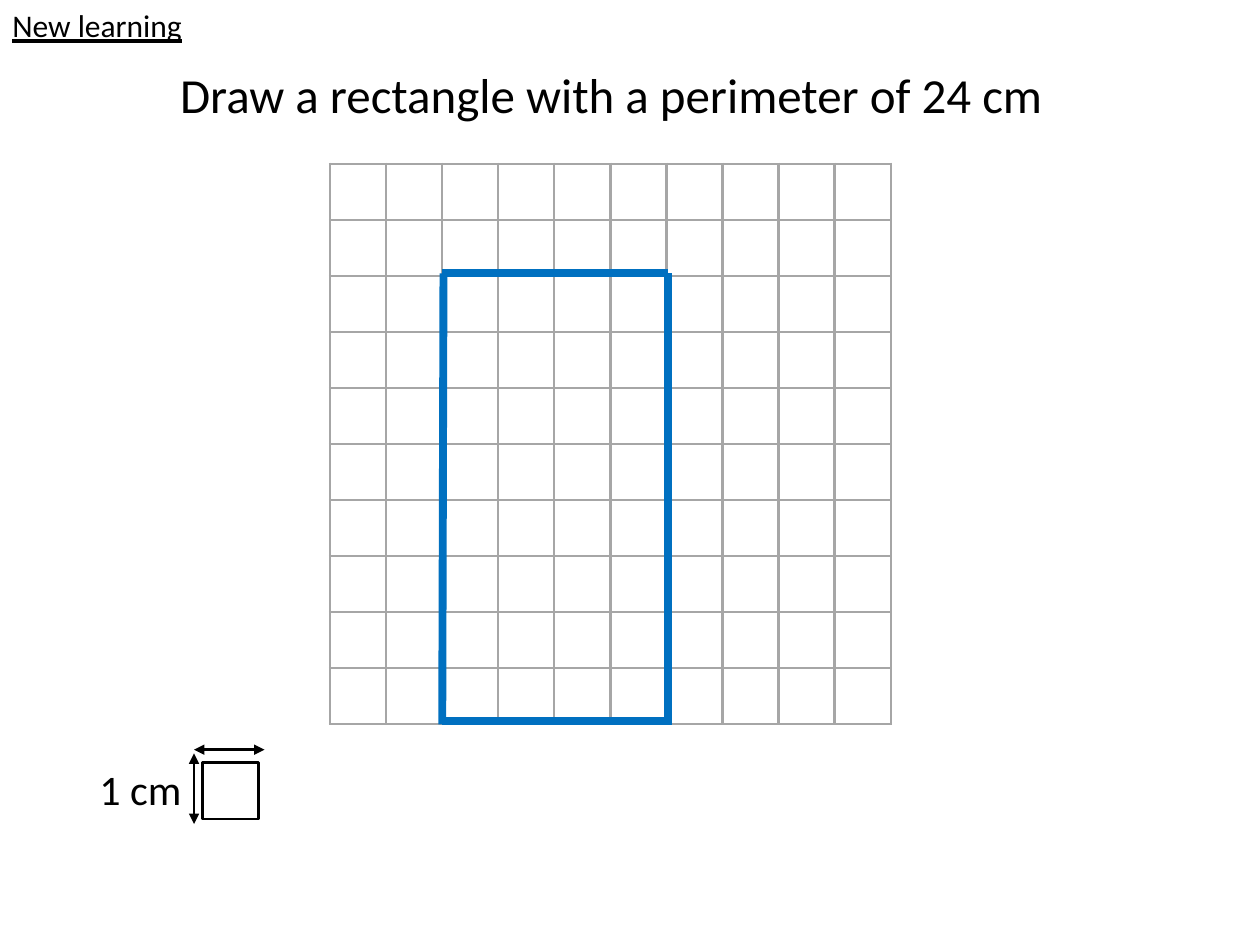
from lxml import etree
from pptx import Presentation
from pptx.dml.color import RGBColor
from pptx.enum import shapes, text
from pptx.oxml import ns
from pptx.util import Inches, Pt

BLACK = RGBColor(0x00, 0x00, 0x00)
WHITE = RGBColor(0xFF, 0xFF, 0xFF)
GREY = RGBColor(0xA6, 0xA6, 0xA6)
BLUE = RGBColor(0x00, 0x70, 0xC0)
FONT = "Calibri"
GRID_COUNT = 10


def add_run(paragraph, wording, size, underline=None):
    run = paragraph.add_run()
    run.text = wording
    run.font.name = FONT
    run.font.size = Pt(size)
    run.font.color.rgb = BLACK
    run.font.underline = underline


def add_label(slide, box, wording, size, wrap=True, underline=None):
    label = slide.shapes.add_textbox(*map(Inches, box))
    frame = label.text_frame
    frame.word_wrap = wrap
    frame.auto_size = text.MSO_AUTO_SIZE.SHAPE_TO_FIT_TEXT
    add_run(frame.paragraphs[0], wording, size, underline)


def add_line(slide, start, end, color, width, arrows=False):
    line = slide.shapes.add_connector(
        shapes.MSO_CONNECTOR.STRAIGHT, *map(Inches, (*start, *end)))
    line.line.color.rgb = color
    line.line.width = Pt(width)
    if arrows:
        outline = line.line._get_or_add_ln()
        for tag in ("a:headEnd", "a:tailEnd"):
            etree.SubElement(outline, ns.qn(tag), type="triangle")
    etree.SubElement(line._element.spPr, ns.qn("a:effectLst"))


def add_title(slide, box):
    title = slide.shapes.title
    title.left, title.top, title.width, title.height = map(Inches, box)
    frame = title.text_frame
    frame.word_wrap = True
    frame.auto_size = text.MSO_AUTO_SIZE.SHAPE_TO_FIT_TEXT
    frame.vertical_anchor = text.MSO_ANCHOR.TOP
    paragraph = frame.paragraphs[0]
    paragraph.alignment = text.PP_ALIGN.CENTER
    paragraph.line_spacing = 1.0
    add_run(paragraph, "Draw a rectangle with a perimeter of 24 cm", 28)


def set_borders(cell, color, width):
    properties = cell._tc.get_or_add_tcPr()
    for position, tag in enumerate(("a:lnL", "a:lnR", "a:lnT", "a:lnB")):
        border = etree.Element(ns.qn(tag), w=str(Pt(width)))
        fill = etree.SubElement(border, ns.qn("a:solidFill"))
        etree.SubElement(fill, ns.qn("a:srgbClr"), val=str(color))
        properties.insert(position, border)


def add_grid(slide, box):
    frame = slide.shapes.add_table(GRID_COUNT, GRID_COUNT, *map(Inches, box))
    table = frame.table
    table.first_row = False
    table.horz_banding = False
    for column in table.columns:
        column.width = Inches(box[2] / GRID_COUNT)
    for row in table.rows:
        row.height = Inches(box[3] / GRID_COUNT)
    for cell in table.iter_cells():
        cell.fill.background()
        set_borders(cell, GREY, 1.5)


def add_rectangle_sides(slide, box):
    """Draw the 4 by 8 rectangle standing on the bottom of the grid."""
    left, top, width, height = box
    right, bottom = left + width, top + height
    base = bottom - 0.03  # the base line sits just inside the grid
    sides = [((left, top), (right, top)),
             ((right, top), (right, bottom)),
             ((left, base), (right, base)),
             ((left + 0.01, top), (left, bottom))]
    for start, end in sides:
        add_line(slide, start, end, BLUE, 4.5)


def add_scale_key(slide, box):
    left, top, width, height = box
    # Unit square
    square = slide.shapes.add_shape(
        shapes.MSO_SHAPE.RECTANGLE, Inches(left + 0.92), Inches(top + 0.1),
        Inches(0.44), Inches(0.45))
    square.shadow.inherit = False
    square.fill.solid()
    square.fill.fore_color.rgb = WHITE
    square.line.color.rgb = BLACK
    square.line.width = Pt(1.5)
    # Arrows for its height and width
    corner = left + 0.85
    add_line(slide, (corner, top + height), (corner, top + 0.03), BLACK, 1.5, True)
    add_line(slide, (left + width, top), (corner, top), BLACK, 1.5, True)
    add_label(slide, (left, top + 0.06, 1.36, 0.5), "1 cm", 24)


def main():
    presentation = Presentation()
    presentation.slide_width = Inches(10)
    presentation.slide_height = Inches(7.5)
    slide = presentation.slides.add_slide(presentation.slide_layouts[5])

    add_grid(slide, (2.62, 1.3, 4.45, 4.45))
    add_title(slide, (1, 0.46, 7.7, 0.57))
    add_rectangle_sides(slide, (3.51, 2.17, 1.79, 3.58))
    add_scale_key(slide, (0.69, 5.95, 1.41, 0.59))
    add_label(slide, (0, 0, 1.56, 0.4), "New learning", 18, wrap=False, underline=True)
    presentation.save("out.pptx")


if __name__ == "__main__":
    main()
